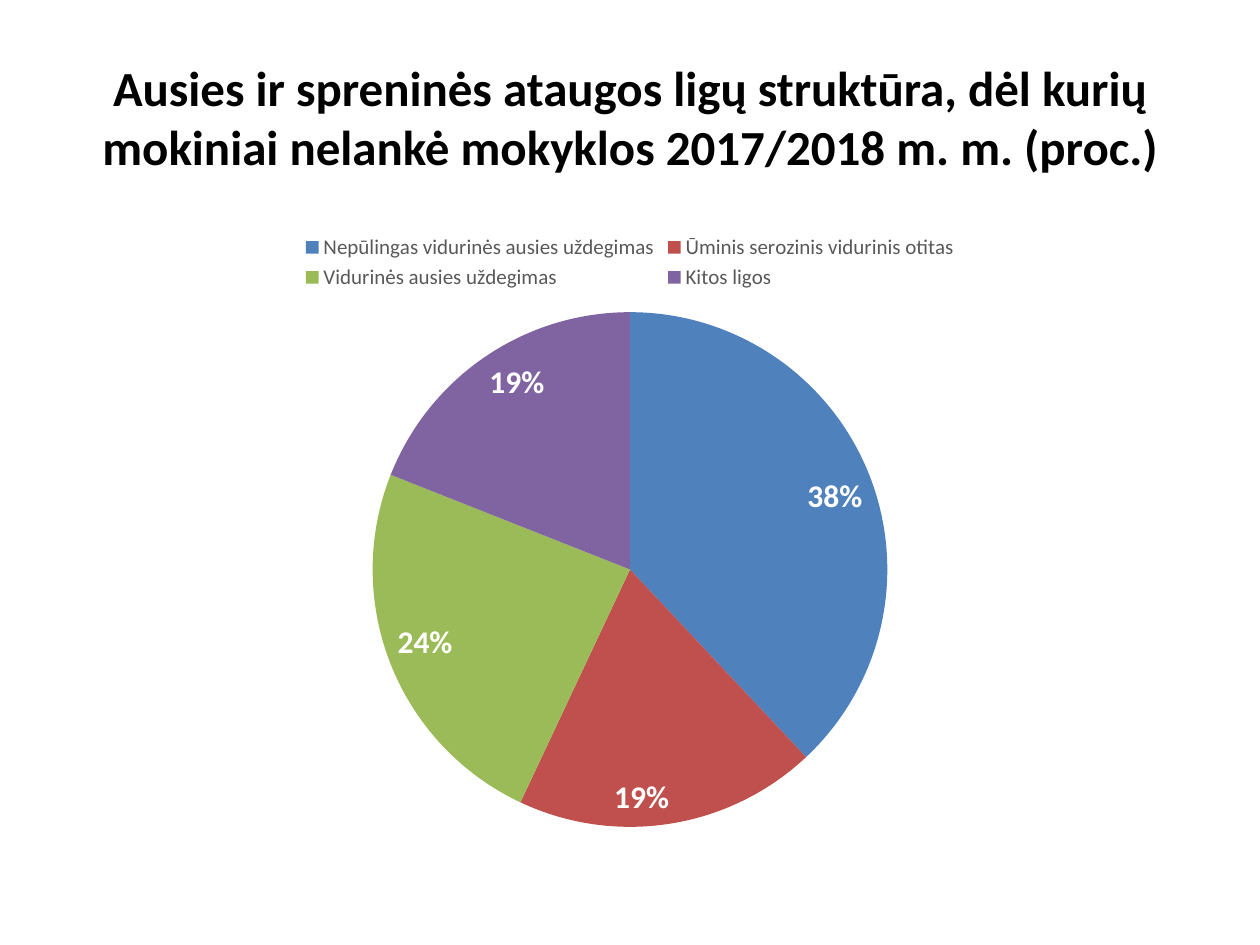
from pptx import Presentation
from pptx.chart.data import CategoryChartData
from pptx.dml.color import RGBColor
from pptx.enum.chart import XL_CHART_TYPE as ChartType
from pptx.enum.chart import XL_LABEL_POSITION as LabelPosition
from pptx.enum.chart import XL_LEGEND_POSITION as LegendPosition
from pptx.enum.text import MSO_ANCHOR, PP_ALIGN
from pptx.util import Cm, Pt

# Content
HEADING = ("Ausies ir spreninės ataugos ligų struktūra, dėl kurių "
           "mokiniai nelankė mokyklos 2017/2018 m. m. (proc.)")
DISEASES = [
    ("Nepūlingas vidurinės ausies uždegimas", 38, "blue"),
    ("Ūminis serozinis vidurinis otitas", 19, "red"),
    ("Vidurinės ausies uždegimas", 24, "green"),
    ("Kitos ligos", 19, "purple"),
]
COLORS = {
    "blue": "4F81BD", "red": "C0504D", "green": "9BBB59", "purple": "8064A2",
    "black": "000000", "grey": "595959", "white": "FFFFFF",
}
FONT = "Calibri"

# Layout
SLIDE_WIDTH, SLIDE_HEIGHT = Cm(25.4), Cm(19.05)
MARGIN = Cm(1.27)
CONTENT_WIDTH = SLIDE_WIDTH - 2 * MARGIN
TITLE_TOP, TITLE_HEIGHT = Cm(0.76), Cm(3.18)
CHART_TOP, CHART_HEIGHT = Cm(4.45), Cm(12.57)


def style(font, size, color, bold=False):
    font.name = FONT
    font.size = Pt(size)
    font.bold = bold
    font.color.rgb = RGBColor.from_string(COLORS[color])


def add_heading(slide):
    title = slide.shapes.title
    title.left, title.top = MARGIN, TITLE_TOP
    title.width, title.height = CONTENT_WIDTH, TITLE_HEIGHT
    frame = title.text_frame
    frame.word_wrap = True
    frame.vertical_anchor = MSO_ANCHOR.MIDDLE
    paragraph = frame.paragraphs[0]
    paragraph.alignment = PP_ALIGN.CENTER
    run = paragraph.add_run()
    run.text = HEADING
    style(run.font, 28, "black", bold=True)


def add_disease_pie(slide):
    shares = CategoryChartData()
    shares.categories = [name for name, _, _ in DISEASES]
    shares.add_series("Series 1", [share for _, share, _ in DISEASES])
    chart = slide.shapes.add_chart(
        ChartType.PIE, MARGIN, CHART_TOP, CONTENT_WIDTH, CHART_HEIGHT, shares
    ).chart
    style(chart.font, 10, "black")
    chart.has_title = False

    # Legend
    chart.has_legend = True
    chart.legend.position = LegendPosition.TOP
    chart.legend.include_in_layout = False
    style(chart.legend.font, 12, "grey")

    # Slices
    pie = chart.plots[0]
    pie.vary_by_categories = True
    series = pie.series[0]
    for index, (_, _, color) in enumerate(DISEASES):
        fill = series.points[index].format.fill
        fill.solid()
        fill.fore_color.rgb = RGBColor.from_string(COLORS[color])

    # Percent labels
    labels = series.data_labels
    labels.show_value = False
    labels.show_percentage = True
    labels.number_format = "0%"
    labels.number_format_is_linked = False
    labels.position = LabelPosition.INSIDE_END
    style(labels.font, 18, "white", bold=True)


def main():
    deck = Presentation()
    deck.slide_width, deck.slide_height = SLIDE_WIDTH, SLIDE_HEIGHT
    slide = deck.slides.add_slide(deck.slide_layouts.get_by_name("Title Only"))
    add_heading(slide)
    add_disease_pie(slide)
    deck.save("out.pptx")


if __name__ == "__main__":
    main()
